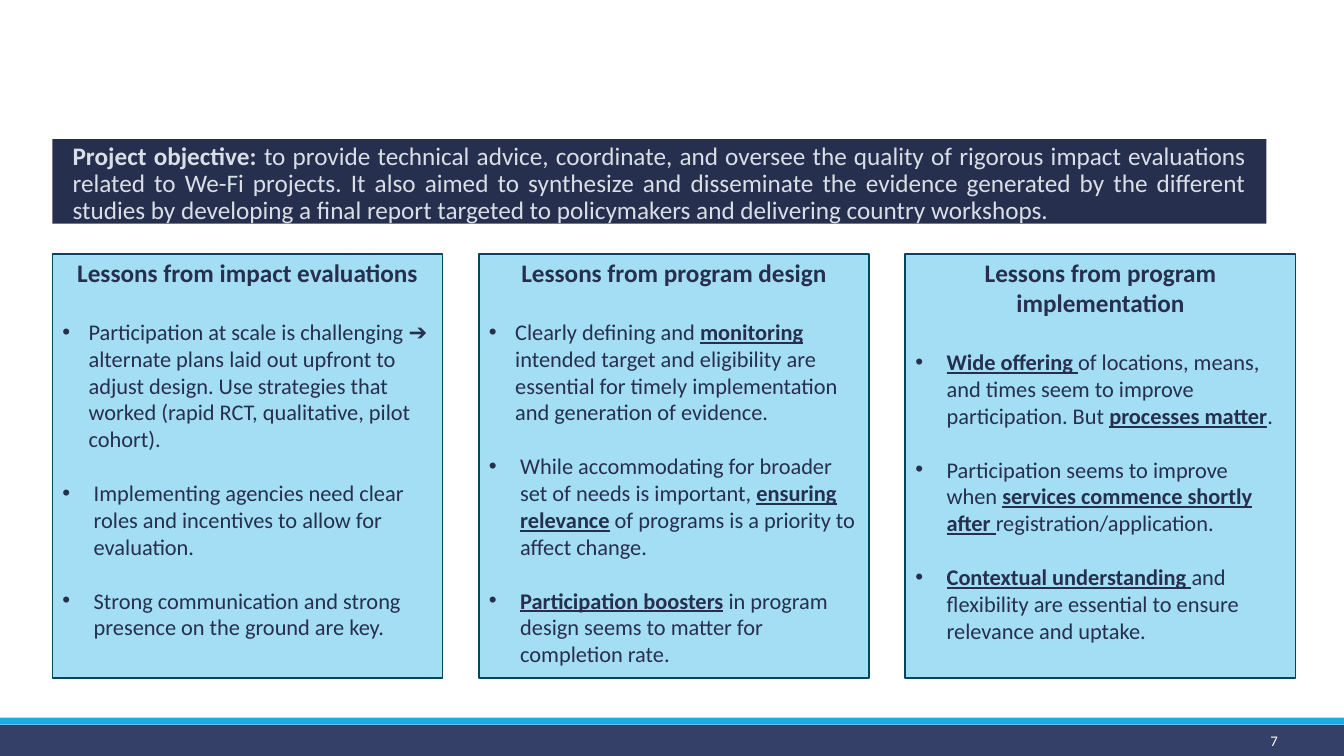
from pptx import Presentation
from pptx.dml.color import RGBColor
from pptx.enum.shapes import MSO_SHAPE as SHAPE
from pptx.enum.text import MSO_ANCHOR as ANCHOR, PP_ALIGN as ALIGN
from pptx.oxml.ns import qn
from pptx.util import Inches, Pt
from lxml.etree import SubElement

W, H = 13.33, 7.5
NAVY, BAR, BLUE, SKY, EDGE, PALE, WHITE = (
    "272F4E", "344068", "1CACE3", "A3DEF4", "05465F", "D9DFE6", "FFFFFF")
STRONG = dict(bold=True, underline=True)

OBJECTIVE = [
    ("Project objective: ", dict(bold=True)),
    ("to provide technical advice, coordinate, and oversee the quality of rigorous impact "
     "evaluations related to We-Fi projects. It also aimed to synthesize and disseminate "
     "the evidence generated by the different studies by developing a final report targeted "
     "to policymakers and delivering country workshops.", {}),
]
NARROW, WIDE = (0.36, 0.26), (0.41, 0.31)
CARDS = [
    ("Lessons from impact evaluations", NARROW, 0.12, [
        [("Participation at scale is challenging ", {}), ("➔ ", dict(font="Arial")),
         ("alternate plans laid out upfront to adjust design. Use strategies that worked "
          "(rapid RCT, qualitative, pilot cohort).", {})],
        [("Implementing agencies need clear roles and incentives to allow for evaluation.", {})],
        [("Strong communication and strong presence on the ground are key.", {})],
    ]),
    ("Lessons from program design", NARROW, 0.12, [
        [("Clearly defining and ", {}), ("monitoring", STRONG),
         (" intended target and eligibility are essential for timely implementation "
          "and generation of evidence.", {})],
        [("While accommodating for broader set of needs is important, ", {}),
         ("ensuring relevance", STRONG),
         (" of programs is a priority to affect change.", {})],
        [("Participation boosters", STRONG),
         (" in program design seems to matter for completion rate.", {})],
    ]),
    ("Lessons from program implementation", WIDE, 0.17, [
        [("Wide offering ", STRONG),
         ("of locations, means, and times seem to improve participation. But ", {}),
         ("processes matter", STRONG), (".", {})],
        [("Participation seems to improve when ", {}),
         ("services commence shortly after ", STRONG), ("registration/application.", {})],
        [("Contextual understanding ", STRONG),
         ("and flexibility are essential to ensure relevance and uptake.", {})],
    ]),
]

LEFT, CARD_TOP, CARD_W, CARD_H, PITCH = 0.52, 2.52, 3.87, 4.21, 4.23
BAR_TOP, STRIPE_H = 7.19, 0.07


def rgb(color):
    return RGBColor.from_string(color)


def add_text(p, text, size=16, color=NAVY, font="Calibri", bold=False, underline=False):
    r = p.add_run()
    r.text = text
    r.font.size, r.font.name = Pt(size), font
    r.font.bold, r.font.underline = bold, underline
    r.font.color.rgb = rgb(color)


def set_frame(s, top=0, side=0):
    tf = s.text_frame
    tf.word_wrap, tf.vertical_anchor = True, ANCHOR.TOP
    tf.margin_top, tf.margin_bottom = Inches(top), 0
    tf.margin_left = tf.margin_right = Inches(side)
    return tf


def add_box(slide, x, y, w, h, fill, line=None):
    s = slide.shapes.add_shape(SHAPE.RECTANGLE, *map(Inches, (x, y, w, h)))
    s.shadow.inherit = False
    s.fill.solid()
    s.fill.fore_color.rgb = rgb(fill)
    if line:
        s.line.color.rgb = rgb(line)
        s.line.width = Pt(1.25)
    else:
        s.line.fill.background()
    return s


def set_bullet(p, indent, hang, right):
    pPr = p._p.get_or_add_pPr()
    for key, inches in (("marL", indent), ("indent", -hang), ("marR", right)):
        pPr.set(key, str(Inches(inches)))
    SubElement(pPr, qn("a:buFont")).set("typeface", "Arial")
    SubElement(pPr, qn("a:buChar")).set("char", "•")


def add_card(slide, x, heading, first_indent, right, bullets):
    s = add_box(slide, x, CARD_TOP, CARD_W, CARD_H, SKY, EDGE)
    tf = set_frame(s, 0.03)
    tf.paragraphs[0].alignment = ALIGN.CENTER
    add_text(tf.paragraphs[0], heading, size=18, bold=True)
    for i, runs in enumerate(bullets):
        p = tf.add_paragraph()
        p.alignment = ALIGN.LEFT
        p.space_before = Pt(19.2 if i else 21.9)
        set_bullet(p, *(WIDE if i else first_indent), right)
        for text, fmt in runs:
            add_text(p, text, **fmt)


def main():
    prs = Presentation()
    prs.slide_width, prs.slide_height = Inches(W), Inches(H)
    slide = prs.slides.add_slide(prs.slide_layouts[6])

    add_box(slide, 0, BAR_TOP, W, H - BAR_TOP, BAR)
    add_box(slide, 0, BAR_TOP - STRIPE_H, W, STRIPE_H, BLUE)

    tf = set_frame(add_box(slide, LEFT, 1.38, 12.04, 0.84, NAVY), 0.04, 0.2)
    p = tf.paragraphs[0]
    p.alignment, p.line_spacing = ALIGN.JUSTIFY, Pt(19.4)
    for text, fmt in OBJECTIVE:
        add_text(p, text, size=18, color=PALE, **fmt)

    for i, card in enumerate(CARDS):
        add_card(slide, LEFT + i * PITCH, *card)

    number = slide.shapes.add_textbox(*map(Inches, (12.56, 7.28, 0.25, 0.19)))
    p = set_frame(number, side=0.04).paragraphs[0]
    p.line_spacing = Pt(11)
    add_text(p, "7", size=10.5, color=WHITE)

    prs.save("out.pptx")


if __name__ == "__main__":
    main()
